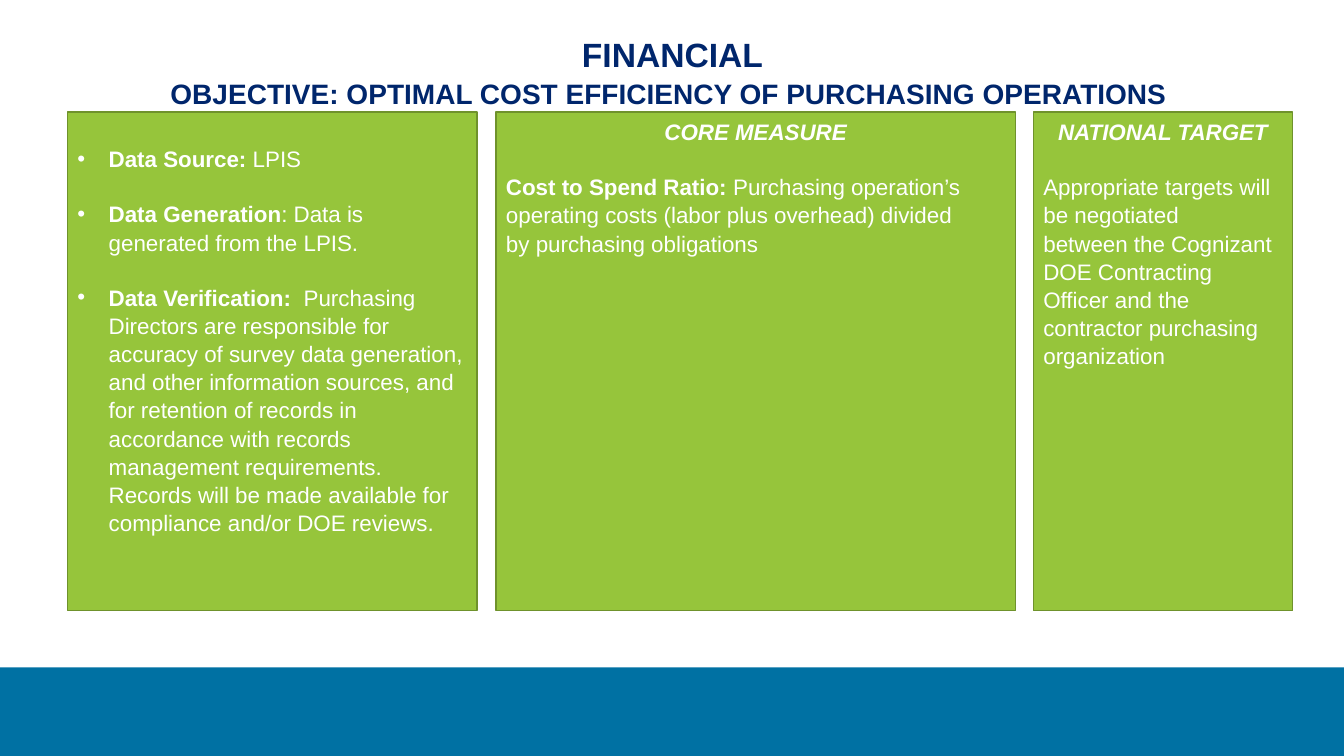
from lxml import etree
from pptx import Presentation
from pptx.dml.color import RGBColor
from pptx.enum.shapes import MSO_SHAPE as Shape
from pptx.enum.text import MSO_ANCHOR as Anchor, MSO_AUTO_SIZE as AutoSize, PP_ALIGN as Align
from pptx.oxml.ns import qn
from pptx.util import Inches, Pt

NAVY = RGBColor(0x00, 0x26, 0x6C)
BLUE = RGBColor(0x00, 0x71, 0xA3)
GREEN = RGBColor(0x96, 0xC5, 0x3B)
DARK_GREEN = RGBColor(0x6F, 0x92, 0x2C)
WHITE = RGBColor(0xFF, 0xFF, 0xFF)

LINE_SPACING = 1.05
BLANK_LINE = 19.25  # points, one line of 16 pt text
PANEL_TOP, PANEL_HEIGHT = 1.11, 4.95

DATA_NOTES = [
    ("Data Source: ", "LPIS"),
    ("Data Generation", ": Data is generated from the LPIS."),
    ("Data Verification:  ",
     "Purchasing Directors are responsible for accuracy of survey data "
     "generation, and other information sources, and for retention of records "
     "in accordance with records management requirements. Records will be made "
     "available for compliance and/or DOE reviews."),
]
CORE_MEASURE = [
    ("Cost to Spend Ratio: ",
     "Purchasing operation’s operating costs (labor plus overhead) divided"),
    ("", "by purchasing obligations"),
]
NATIONAL_TARGET = [
    ("", "Appropriate targets will be negotiated"),
    ("", "between the Cognizant DOE Contracting"),
    ("", "Officer and the contractor purchasing"),
    ("", "organization"),
]


def add_rectangle(page, left, top, width, height, fill):
    box = page.shapes.add_shape(Shape.RECTANGLE, Inches(left), Inches(top),
                                Inches(width), Inches(height))
    box.shadow.inherit = False
    box.fill.solid()
    box.fill.fore_color.rgb = fill
    box.line.fill.background()
    return box


def add_span(para, text, size, color, bold=False, italic=False):
    span = para.add_run()
    span.text = text
    span.font.name = "Arial"
    span.font.size = Pt(size)
    span.font.color.rgb = color
    span.font.bold = bold
    span.font.italic = italic


def add_para(frame, align=Align.LEFT, space_before=0):
    # A new frame already holds one empty paragraph
    para = frame.paragraphs[0]
    if para.runs:
        para = frame.add_paragraph()
    para.alignment = align
    para.line_spacing = LINE_SPACING
    para.space_before = Pt(space_before)
    return para


def add_bullet(para):
    properties = para._p.get_or_add_pPr()
    properties.set("marL", str(Inches(0.31)))
    properties.set("indent", str(Inches(-0.31)))
    font = etree.SubElement(properties, qn("a:buFont"))
    font.set("typeface", "Arial")
    etree.SubElement(properties, qn("a:buChar")).set("char", "•")


def add_panel(page, left, width):
    panel = add_rectangle(page, left, PANEL_TOP, width, PANEL_HEIGHT, GREEN)
    panel.line.color.rgb = DARK_GREEN
    panel.line.width = Pt(1)
    frame = panel.text_frame
    frame.word_wrap = True
    frame.vertical_anchor = Anchor.TOP
    return frame


def add_labelled_text(para, label, text):
    if label:
        add_span(para, label, 16, WHITE, bold=True)
    add_span(para, text, 16, WHITE)


def add_bullet_panel(page, left, width, items):
    frame = add_panel(page, left, width)
    frame.margin_top = Inches(0.32)
    for index, (label, text) in enumerate(items):
        para = add_para(frame, space_before=BLANK_LINE if index else 0)
        add_bullet(para)
        add_labelled_text(para, label, text)


def add_headed_panel(page, left, width, heading, lines):
    frame = add_panel(page, left, width)
    add_span(add_para(frame, Align.CENTER), heading, 16, WHITE, bold=True, italic=True)
    for index, (label, text) in enumerate(lines):
        para = add_para(frame, space_before=0 if index else BLANK_LINE)
        add_labelled_text(para, label, text)


def set_title(page, lines):
    title = page.shapes.title
    title.left, title.top = Inches(1.44), Inches(0.27)
    title.width, title.height = Inches(10.46), Inches(0.84)
    frame = title.text_frame
    frame.word_wrap = True
    frame.auto_size = AutoSize.NONE
    frame.vertical_anchor = Anchor.TOP
    for text, size in lines:
        add_span(add_para(frame, Align.CENTER), text, size, NAVY, bold=True)


def main():
    deck = Presentation()
    deck.slide_width, deck.slide_height = Inches(13.33), Inches(7.5)
    page = deck.slides.add_slide(deck.slide_layouts[5])

    # Footer band and title
    add_rectangle(page, 0, 6.62, 13.33, 0.88, BLUE)
    set_title(page, [
        ("FINANCIAL", 24),
        ("OBJECTIVE: OPTIMAL COST EFFICIENCY OF PURCHASING OPERATIONS ", 20),
    ])

    # Three panels
    add_bullet_panel(page, 0.67, 4.06, DATA_NOTES)
    add_headed_panel(page, 4.92, 5.15, "CORE MEASURE", CORE_MEASURE)
    add_headed_panel(page, 10.25, 2.57, "NATIONAL TARGET", NATIONAL_TARGET)

    deck.save("out.pptx")


if __name__ == "__main__":
    main()
